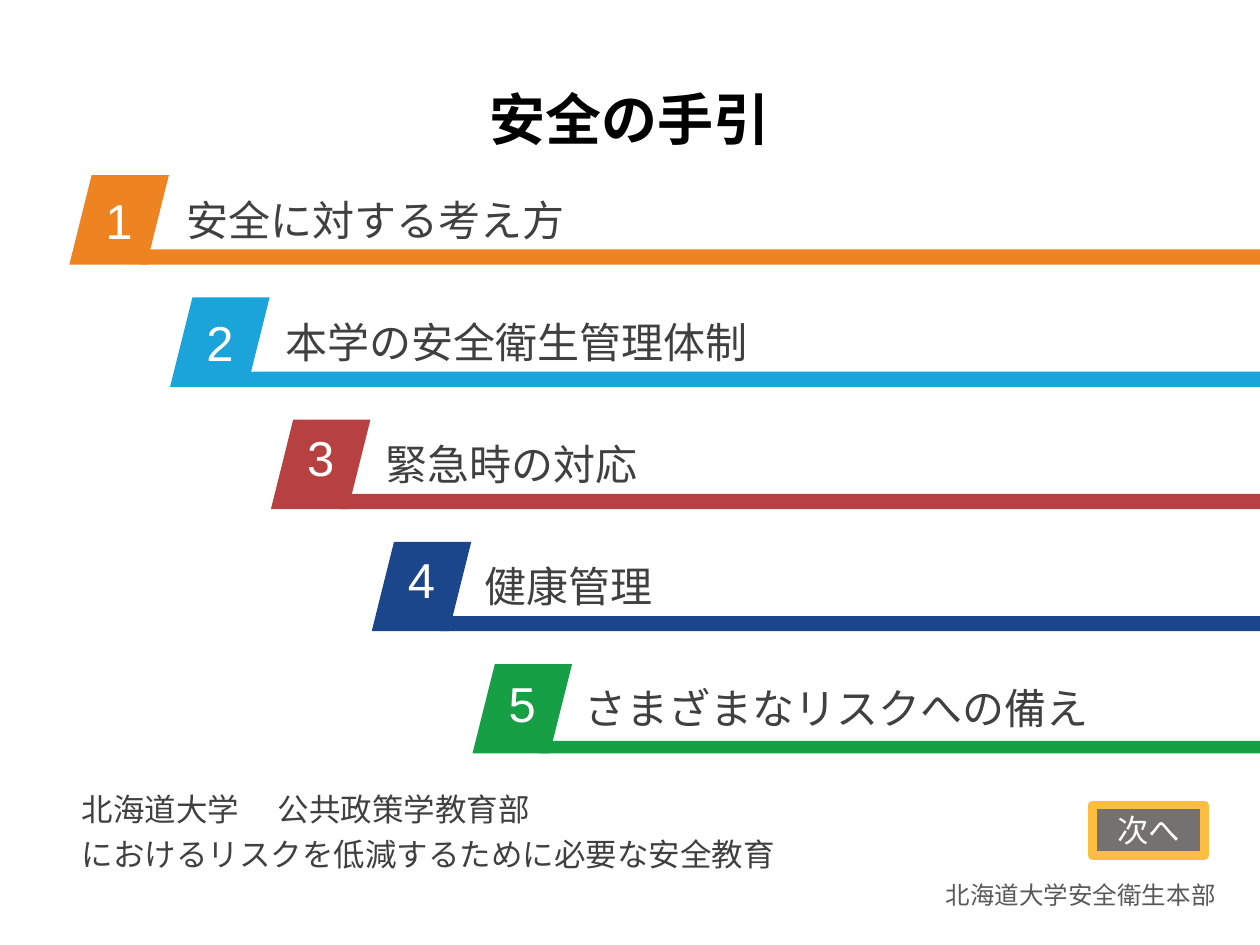
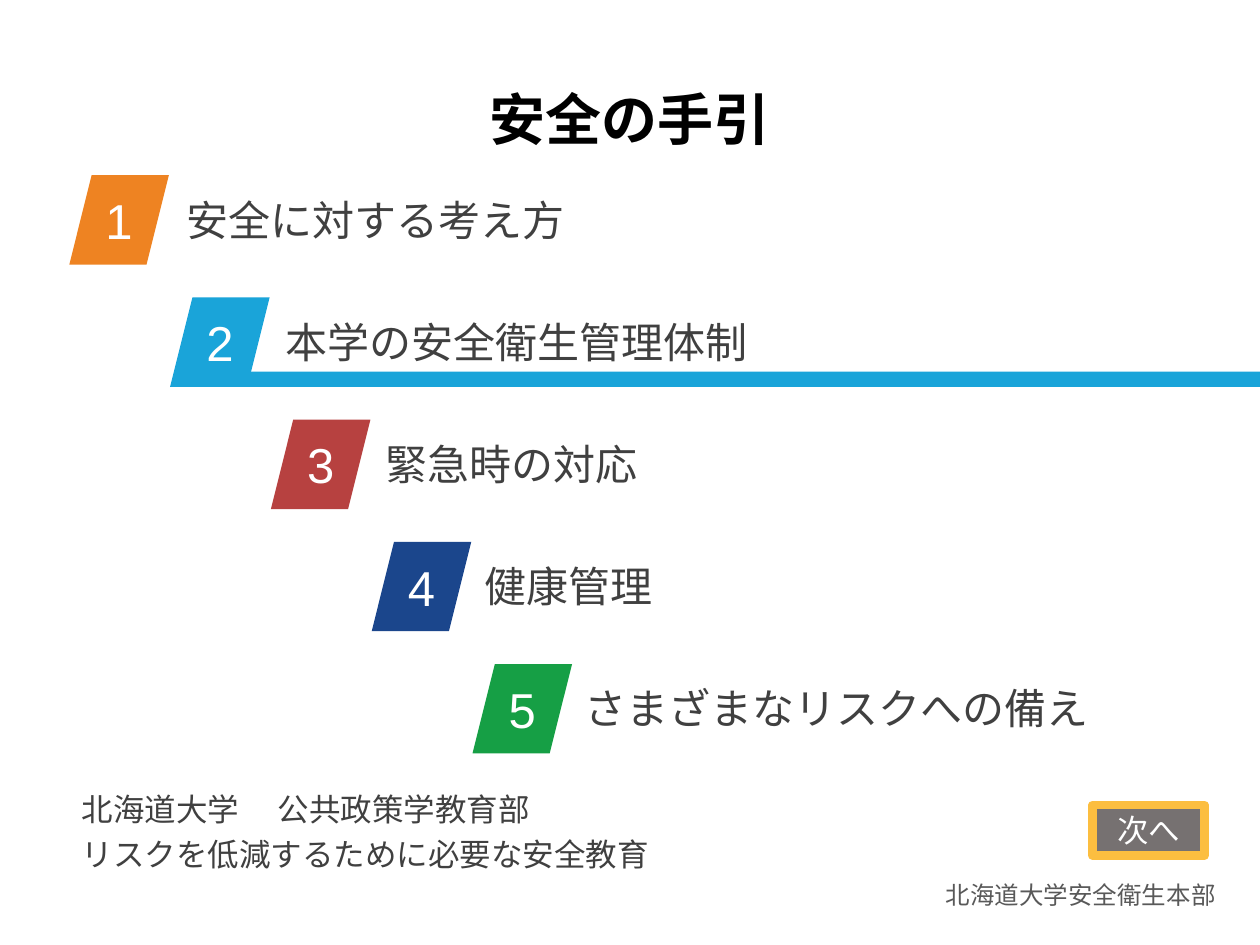
import dataclasses

import pptx
import pptx.dml.color
import pptx.enum.shapes
import pptx.enum.text
import pptx.util
from lxml import etree
from pptx.oxml.ns import qn

RGBColor = pptx.dml.color.RGBColor
Inches = pptx.util.Inches
Shape = pptx.enum.shapes.MSO_SHAPE
Align = pptx.enum.text.PP_ALIGN
Anchor = pptx.enum.text.MSO_ANCHOR

WHITE = RGBColor(0xFF, 0xFF, 0xFF)
BLACK = RGBColor(0x00, 0x00, 0x00)
TEXT = RGBColor(0x40, 0x40, 0x40)
FOOTER_TEXT = RGBColor(0x59, 0x59, 0x59)
BUTTON_FILL = RGBColor(0x76, 0x71, 0x71)
BUTTON_LINE = RGBColor(0xFC, 0xBE, 0x40)
ORANGE = RGBColor(0xEE, 0x83, 0x22)
SKY = RGBColor(0x1A, 0xA4, 0xD9)
RED = RGBColor(0xB7, 0x41, 0x40)
NAVY = RGBColor(0x1B, 0x46, 0x8C)
GREEN = RGBColor(0x16, 0x9F, 0x45)

FONT = "Arial"
JAPANESE_FONT = "Noto Sans CJK JP"
SLIDE_WIDTH, SLIDE_HEIGHT = 10, 7.5
LEFT, TOP = 0.55, 1.39
COLUMN, ROW = 0.8, 0.97
TEXT_COLUMN = 0.79
BADGE_WIDTH, BADGE_HEIGHT = 0.79, 0.71


@dataclasses.dataclass
class Chapter:
    """One step of the staircase menu."""

    label: str
    color: RGBColor
    label_width: float
    bar_height: float = 0.12
    raised_number: bool = True


CHAPTERS = [
    Chapter("安全に対する考え方", ORANGE, 4.36, raised_number=False),
    Chapter("本学の安全衛生管理体制", SKY, 6.91, raised_number=False),
    Chapter("緊急時の対応", RED, 3.48),
    Chapter("健康管理", NAVY, 3.74),
    Chapter("さまざまなリスクへの備え", GREEN, 4.39, bar_height=0.1),
]
ORGANISATION = "北海道大学\u3000 公共政策学教育部".replace("\u3000", "　")
MENUS = [
    ({1, 2, 3, 4, 5}, "におけるリスクを低減するために必要な安全教育"),
    ({2}, "リスクを低減するために必要な安全教育"),
]


def write(shape, text, size, color, align=Align.LEFT, anchor=Anchor.MIDDLE,
          bold=False, spacing=None, margins=None):
    """Fill a shape with text in one style."""
    frame = shape.text_frame
    frame.text = text
    frame.word_wrap = True
    frame.vertical_anchor = anchor
    if margins:
        frame.margin_left = frame.margin_right = Inches(margins[0])
        frame.margin_top = frame.margin_bottom = Inches(margins[1])
    for paragraph in frame.paragraphs:
        paragraph.alignment = align
        paragraph.line_spacing = spacing
        for run in paragraph.runs:
            run.font.name = FONT
            run.font.size = pptx.util.Pt(size)
            run.font.bold = bold
            run.font.color.rgb = color


def add_text(slide, box, text, size, color, **style):
    """Add a wrapped text box."""
    shape = slide.shapes.add_textbox(*map(Inches, box))
    write(shape, text, size, color, **style)
    return shape


def add_block(slide, kind, box, color):
    """Add a flat preset shape without an outline."""
    shape = slide.shapes.add_shape(kind, *map(Inches, box))
    shape.shadow.inherit = False
    shape.fill.solid()
    shape.fill.fore_color.rgb = color
    shape.line.fill.background()
    return shape


def add_chapter(slide, index, chapter, has_bar, all_bars):
    """Add the badge, number, label and optional bar of a chapter."""
    left, top = LEFT + index * COLUMN, TOP + index * ROW
    label_left = 1.38 + index * TEXT_COLUMN
    add_text(slide, (label_left, top, chapter.label_width, 0.7),
             chapter.label, 24, TEXT)
    add_block(slide, Shape.PARALLELOGRAM,
              (left, top, BADGE_WIDTH, BADGE_HEIGHT), chapter.color)
    if has_bar:
        bar_left = 1.12 + index * TEXT_COLUMN
        bar_top = top + BADGE_HEIGHT - chapter.bar_height
        add_block(slide, Shape.RECTANGLE,
                  (bar_left, bar_top, SLIDE_WIDTH - bar_left, chapter.bar_height),
                  chapter.color)
    raised = all_bars and chapter.raised_number
    number_height = BADGE_HEIGHT - (chapter.bar_height if raised else 0)
    add_text(slide, (left, top, BADGE_WIDTH, number_height),
             str(index + 1), 28, WHITE, align=Align.CENTER)


def add_title(slide):
    """Add the centred slide title."""
    add_text(slide, (0.1 * SLIDE_WIDTH, 0.1 * SLIDE_HEIGHT, 0.8 * SLIDE_WIDTH, 0.44),
             "安全の手引", 32, BLACK, align=Align.CENTER, bold=True,
             spacing=0.9, margins=(0, 0))


def add_next_button(slide):
    """Add the framed button that leads onwards."""
    button = add_block(slide, Shape.RECTANGLE, (8.67, 6.39, 0.89, 0.4), BUTTON_FILL)
    button.line.color.rgb = BUTTON_LINE
    button.line.width = pptx.util.Pt(5)
    write(button, "次へ", 18, WHITE, align=Align.CENTER)


def add_footer(slide):
    """Add the translucent footer with the department name."""
    footer = add_block(slide, Shape.RECTANGLE, (6.27, 6.97, 3.46, 0.2), WHITE)
    color = footer.fill._xPr.find(qn("a:solidFill"))[0]
    etree.SubElement(color, qn("a:alpha"), val="70000")
    write(footer, "北海道大学安全衛生本部", 14, FOOTER_TEXT, align=Align.RIGHT,
          anchor=Anchor.TOP, spacing=0.9, margins=(0.08, 0.04))


def add_purpose(slide, purpose):
    """Add the organisation and the purpose of the training."""
    shape = add_text(slide, (LEFT, 6.2, 5.8, 0.74),
                     f"{ORGANISATION}\n{purpose}", 18, TEXT, spacing=1.2)
    shape.text_frame.paragraphs[0].runs[0].font.name = JAPANESE_FONT


def add_menu(presentation, barred, purpose):
    """Add a menu slide with bars under the chosen chapters."""
    slide = presentation.slides.add_slide(presentation.slide_layouts[6])
    add_footer(slide)
    all_bars = len(barred) == len(CHAPTERS)
    for index, chapter in enumerate(CHAPTERS):
        add_chapter(slide, index, chapter, index + 1 in barred, all_bars)
    add_title(slide)
    add_next_button(slide)
    add_purpose(slide, purpose)


def main():
    """Build the menu slides and save them."""
    presentation = pptx.Presentation()
    presentation.slide_width = Inches(SLIDE_WIDTH)
    presentation.slide_height = Inches(SLIDE_HEIGHT)
    for barred, purpose in MENUS:
        add_menu(presentation, barred, purpose)
    presentation.save("out.pptx")


if __name__ == "__main__":
    main()
